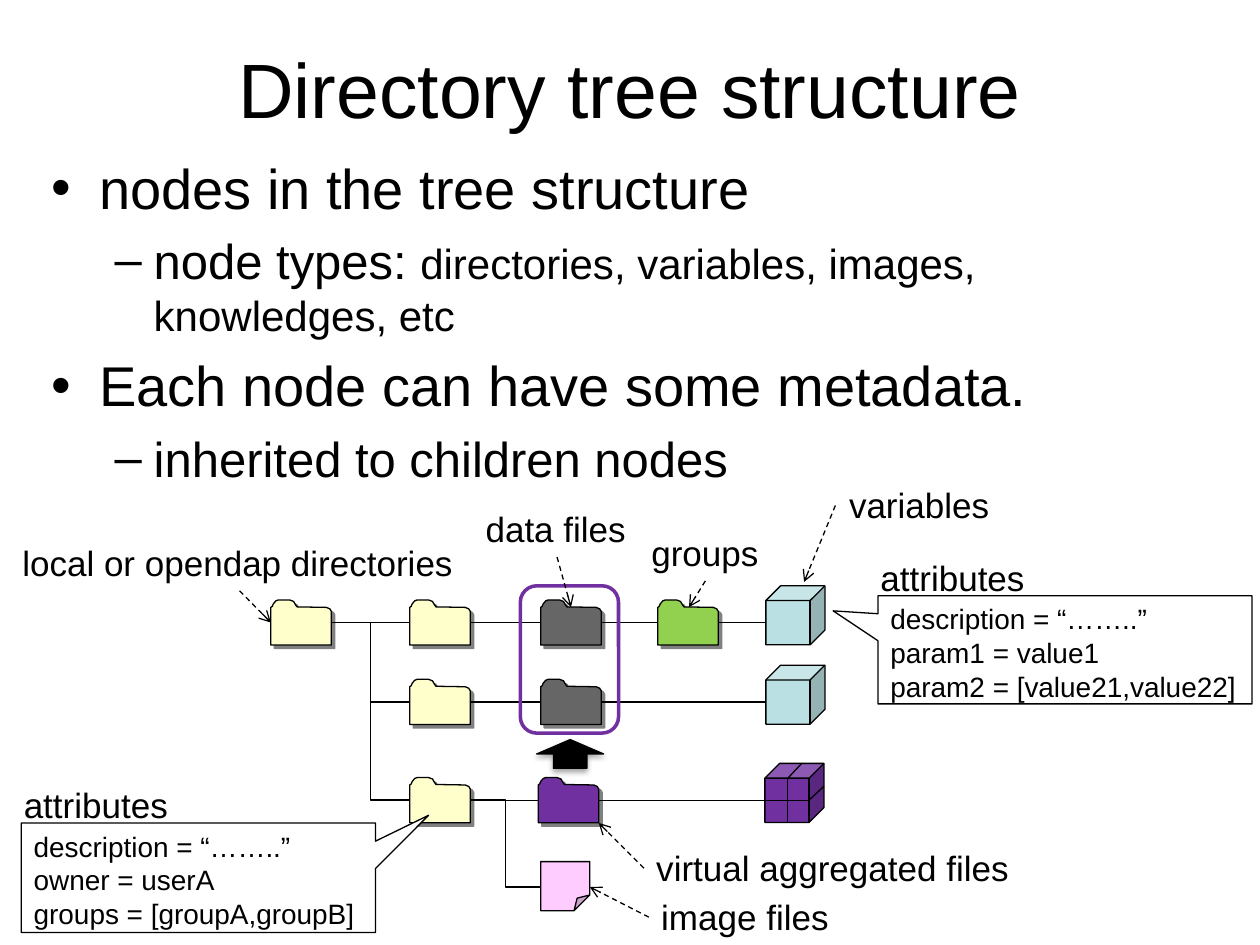
from typing import NamedTuple

from lxml import etree
from pptx import Presentation, util as u
from pptx.dml.color import RGBColor
from pptx.enum import dml, shapes, text
from pptx.oxml import ns

BLACK, WHITE = RGBColor(0x00, 0x00, 0x00), RGBColor(0xFF, 0xFF, 0xFF)
GRAY, DARK_GRAY = RGBColor(0x80, 0x80, 0x80), RGBColor(0x66, 0x66, 0x66)
CREAM, PINK = RGBColor(0xFF, 0xFF, 0xCC), RGBColor(0xFF, 0xCC, 0xFF)
GREEN, PURPLE = RGBColor(0x92, 0xD0, 0x50), RGBColor(0x70, 0x30, 0xA0)
PALE_BLUE = RGBColor(0xBB, 0xE0, 0xE3)

Point = tuple[float, float]
SHAPE, CONNECTOR = shapes.MSO_SHAPE, shapes.MSO_CONNECTOR
LEFT, CENTER = text.PP_ALIGN.LEFT, text.PP_ALIGN.CENTER

ROWS = TOP, MIDDLE, BOTTOM = 12.55, 14.15, 16.13
ROOT_X, DIRECTORY_X, FILE_X, VIRTUAL_X, GROUP_X = 5.46, 8.26, 10.9, 10.85, 13.26
CUBE_X, VIRTUAL_CUBE_X = 15.44, 15.42
FOLDER_WIDTH, FOLDER_HEIGHT = 1.22, 0.91
CUBE_SIZE, CUBE_RISE = 1.19, 0.74
FOLDER_OUTLINE = [
    (0, 15), (3, 13), (5, 8), (10, 2), (15, 0), (38, 0), (46, 3), (50, 10),
    (53, 14), (112, 15), (119, 18), (122, 23), (122, 91), (0, 91),
]


class Folder(NamedTuple):
    x: float
    row: float
    color: RGBColor


class Label(NamedTuple):
    words: str
    x: float
    y: float
    width: float
    align: text.PP_ALIGN = LEFT


class Callout(NamedTuple):
    words: str
    bounds: tuple[float, float, float, float]
    pointer: Point


FOLDERS = [
    Folder(ROOT_X, TOP, CREAM),
    *(Folder(DIRECTORY_X, row, CREAM) for row in ROWS),
    *(Folder(FILE_X, row, DARK_GRAY) for row in (TOP, MIDDLE)),
    Folder(VIRTUAL_X, BOTTOM, PURPLE),
    Folder(GROUP_X, TOP, GREEN),
]
CUBES = [(CUBE_X, TOP, PALE_BLUE), (CUBE_X, MIDDLE, PALE_BLUE), (VIRTUAL_CUBE_X, BOTTOM, PURPLE)]
ROW_STOPS = [
    (TOP, [ROOT_X, DIRECTORY_X, FILE_X, GROUP_X, CUBE_X]),
    (MIDDLE, [DIRECTORY_X, FILE_X, CUBE_X]),
    (BOTTOM, [DIRECTORY_X, VIRTUAL_X, VIRTUAL_CUBE_X]),
]
LABELS = [
    Label("local or opendap directories", 0.2, 10.8, 9.27),
    Label("data files", 9.53, 10.11, 3.35, CENTER),
    Label("variables", 16.84, 9.63, 3.38, CENTER),
    Label("groups", 12.88, 10.59, 2.69),
    Label("attributes", 17.5, 11.1, 3.43),
    Label("attributes", 0.23, 15.67, 3.43),
    Label("virtual aggregated files", 12.98, 16.94, 7.67),
    Label("image files", 13.08, 17.93, 3.91),
]
POINTERS = [
    ((4.83, 11.91), (5.46, 12.55)), ((11.23, 11.23), (11.51, 12.24)),
    ((16.84, 10.19), (16.21, 11.73)), ((14.22, 11.71), (13.89, 12.24)),
    ((12.98, 17.5), (12.07, 16.59)), ((13.08, 18.49), (11.89, 17.88)),
]
CALLOUTS = [
    Callout("description = “……..”\nowner = userA\ngroups = [groupA,groupB]",
            (0.43, 16.59, 7.14, 2.21), (0.65, -0.57)),
    Callout("description = “……..”\nparam1 = value1\nparam2 = [value21,value22]",
            (17.7, 12.01, 7.54, 2.18), (-0.62, -0.36)),
]
BULLETS = [
    (0, [("nodes in the tree structure", 32)]),
    (1, [("node types: ", 28), ("directories, variables, images, knowledges, etc", 24)]),
    (0, [("Each node can have some metadata.", 32)]),
    (1, [("inherited to children nodes", 28)]),
]
BULLET_STYLES = [("•", 0.96, -0.96), ("–", 2.06, -0.79)]


def add_child(parent, tag: str, **attributes):
    return etree.SubElement(parent, ns.qn(tag), {name: str(value) for name, value in attributes.items()})


def style_span(span, size: int) -> None:
    span.font.name = "Arial"
    span.font.size = u.Pt(size)
    span.font.color.rgb = BLACK


def write_lines(frame, words: str, size: int, align=LEFT) -> None:
    frame.text = words
    for para in frame.paragraphs:
        para.alignment = align
        for span in para.runs:
            style_span(span, size)


def style_shape(shape, fill: RGBColor, line=BLACK, weight=0.75) -> None:
    shape.fill.solid()
    shape.fill.fore_color.rgb = fill
    shape.line.color.rgb = line
    shape.line.width = u.Pt(weight)
    shape.shadow.inherit = False


def cast_shadow(shape, color: RGBColor, opacity: int, blur: float, distance: float, angle: int) -> None:
    effects = shape.element.spPr.find(ns.qn("a:effectLst"))
    shadow = add_child(effects, "a:outerShdw", blurRad=u.Pt(blur), dist=u.Pt(distance),
                       dir=angle * 60000, algn="ctr", rotWithShape=0)
    add_child(add_child(shadow, "a:srgbClr", val=color), "a:alpha", val=opacity * 1000)


def add_preset(page, kind, bounds, fill: RGBColor, adjust: dict[str, float] | None = None, **style):
    shape = page.shapes.add_shape(kind, *map(u.Cm, bounds))
    style_shape(shape, fill, **style)
    if adjust:
        guides = shape.element.spPr.find(ns.qn("a:prstGeom")).find(ns.qn("a:avLst"))
        guides.clear()
        for name, value in adjust.items():
            add_child(guides, "a:gd", name=name, fmla=f"val {round(value * 100000)}")
    return shape


def add_line(page, start: Point, end: Point, kind=CONNECTOR.STRAIGHT, arrow=False) -> None:
    line = page.shapes.add_connector(kind, *map(u.Cm, (*start, *end)))
    line.line.color.rgb = BLACK
    line.line.width = u.Pt(0.75)
    properties = line.element.spPr
    if arrow:
        line.line.dash_style = dml.MSO_LINE.DASH
        add_child(properties.find(ns.qn("a:ln")), "a:tailEnd", type="arrow")
    add_child(properties, "a:effectLst")


def add_folder(page, folder: Folder) -> None:
    builder = page.shapes.build_freeform(*FOLDER_OUTLINE[0], scale=u.Cm(0.01))
    builder.add_line_segments(FOLDER_OUTLINE[1:], close=True)
    shape = builder.convert_to_shape(u.Cm(folder.x), u.Cm(folder.row - FOLDER_HEIGHT / 2))
    style_shape(shape, folder.color)
    cast_shadow(shape, GRAY, 100, 0, 2.8, 45)


def add_label(page, label: Label) -> None:
    box = page.shapes.add_textbox(*map(u.Cm, (label.x, label.y, label.width, 1.12)))
    box.text_frame.word_wrap = False
    box.text_frame.auto_size = text.MSO_AUTO_SIZE.SHAPE_TO_FIT_TEXT
    write_lines(box.text_frame, label.words, 20, label.align)


def add_callout(page, callout: Callout) -> None:
    adjust = dict(zip(("adj1", "adj2"), callout.pointer))
    shape = add_preset(page, SHAPE.RECTANGULAR_CALLOUT, callout.bounds, WHITE, adjust)
    shape.text_frame.vertical_anchor = text.MSO_ANCHOR.TOP
    write_lines(shape.text_frame, callout.words, 16)


def add_bullets(page) -> None:
    frame = page.shapes.add_textbox(*map(u.Cm, (0.79, 2.97, 24, 15.09))).text_frame
    frame.word_wrap = True
    for index, (level, spans) in enumerate(BULLETS):
        para = frame.add_paragraph() if index else frame.paragraphs[0]
        para.level = level
        mark, margin, indent = BULLET_STYLES[level]
        properties = para._p.get_or_add_pPr()
        properties.set("marL", str(u.Cm(margin)))
        properties.set("indent", str(u.Cm(indent)))
        add_child(add_child(properties, "a:spcBef"), "a:spcPct", val=20000)
        add_child(properties, "a:buFont", typeface="Arial")
        add_child(properties, "a:buChar", char=mark)
        for words, size in spans:
            span = para.add_run()
            span.text = words
            style_span(span, size)


def add_tree(page) -> None:
    for folder in FOLDERS:
        add_folder(page, folder)
    for row, stops in ROW_STOPS:
        for start, end in zip(stops, stops[1:]):
            add_line(page, (start + FOLDER_WIDTH, row), (end, row))
    add_preset(page, SHAPE.FOLDED_CORNER, (FILE_X, 17.37, 0.99, 0.99), PINK, {"adj": 0.32})
    elbows = [((ROOT_X + FOLDER_WIDTH, TOP), (DIRECTORY_X, row)) for row in (MIDDLE, BOTTOM)]
    for start, end in [*elbows, ((DIRECTORY_X + FOLDER_WIDTH, BOTTOM), (FILE_X, 17.88))]:
        add_line(page, start, end, CONNECTOR.ELBOW)
    for x, row, color in CUBES:
        add_preset(page, SHAPE.CUBE, (x, row - CUBE_RISE, CUBE_SIZE, CUBE_SIZE), color)
    left, top = VIRTUAL_CUBE_X, BOTTOM - CUBE_RISE
    seams = [(left, BOTTOM), (left + 0.89, BOTTOM), (left + CUBE_SIZE, BOTTOM - 0.28)]
    cuts = [(left + 0.74, top), (left + 0.46, top + 0.3), (left + 0.46, top + CUBE_SIZE)]
    for trail in (seams, cuts):
        for start, end in zip(trail, trail[1:]):
            add_line(page, start, end)
    frame = add_preset(page, SHAPE.ROUNDED_RECTANGLE, (10.49, 11.81, 1.98, 2.97), WHITE, line=PURPLE, weight=2)
    frame.fill.background()
    arrow = add_preset(page, SHAPE.UP_ARROW, (10.82, 14.91, 1.35, 0.58), BLACK)
    cast_shadow(arrow, BLACK, 35, 3.1, 1.8, 90)


deck = Presentation()
deck.slide_width, deck.slide_height = u.Cm(25.4), u.Cm(19.05)
page = deck.slides.add_slide(deck.slide_layouts[6])
title = page.shapes.add_textbox(*map(u.Cm, (1.27, 0.58, 22.86, 2.39))).text_frame
title.word_wrap = True
title.vertical_anchor = text.MSO_ANCHOR.MIDDLE
write_lines(title, "Directory tree structure", 44, CENTER)
add_bullets(page)
add_tree(page)
for callout in CALLOUTS:
    add_callout(page, callout)
for label in LABELS:
    add_label(page, label)
for start, end in POINTERS:
    add_line(page, start, end, arrow=True)
deck.save("out.pptx")
